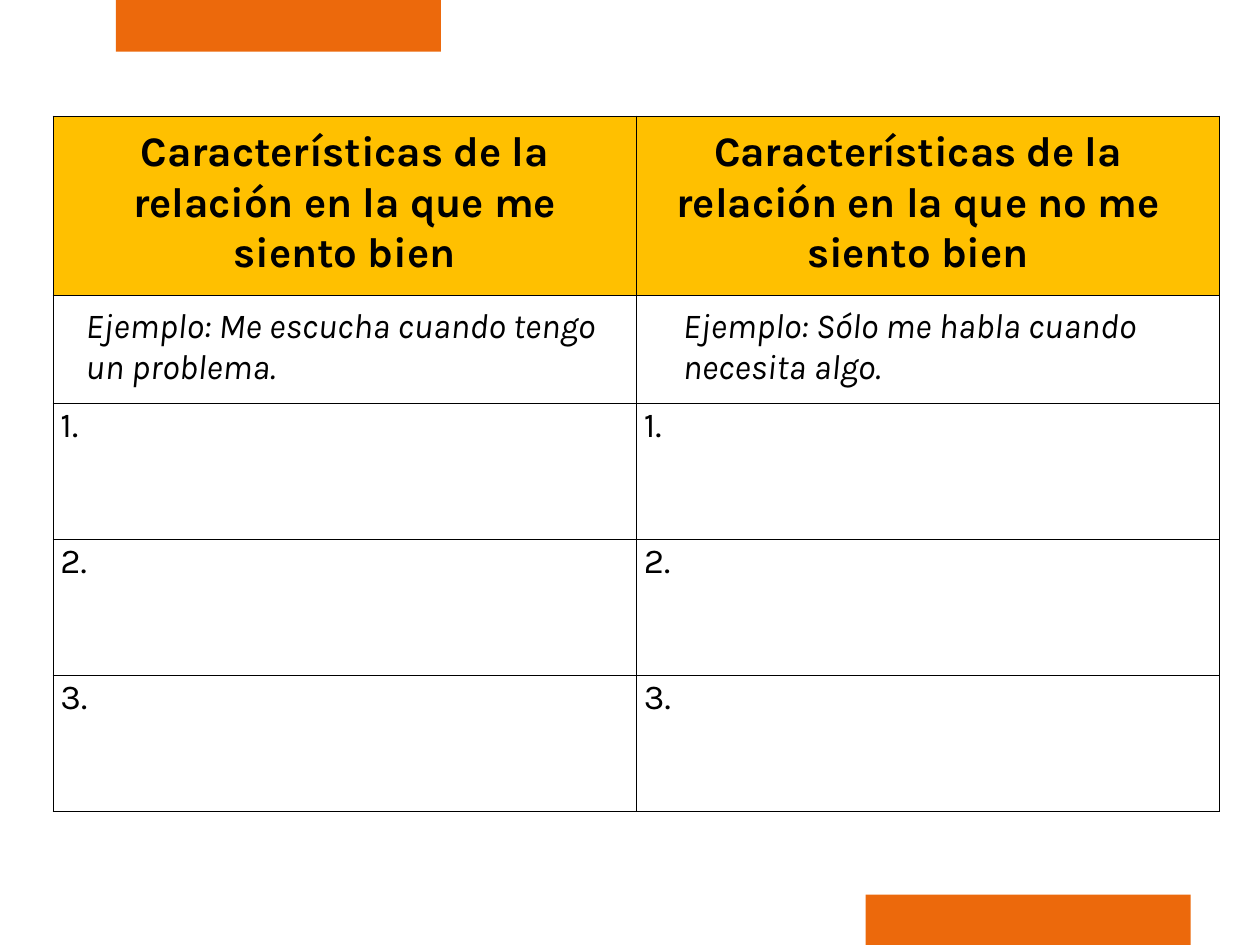
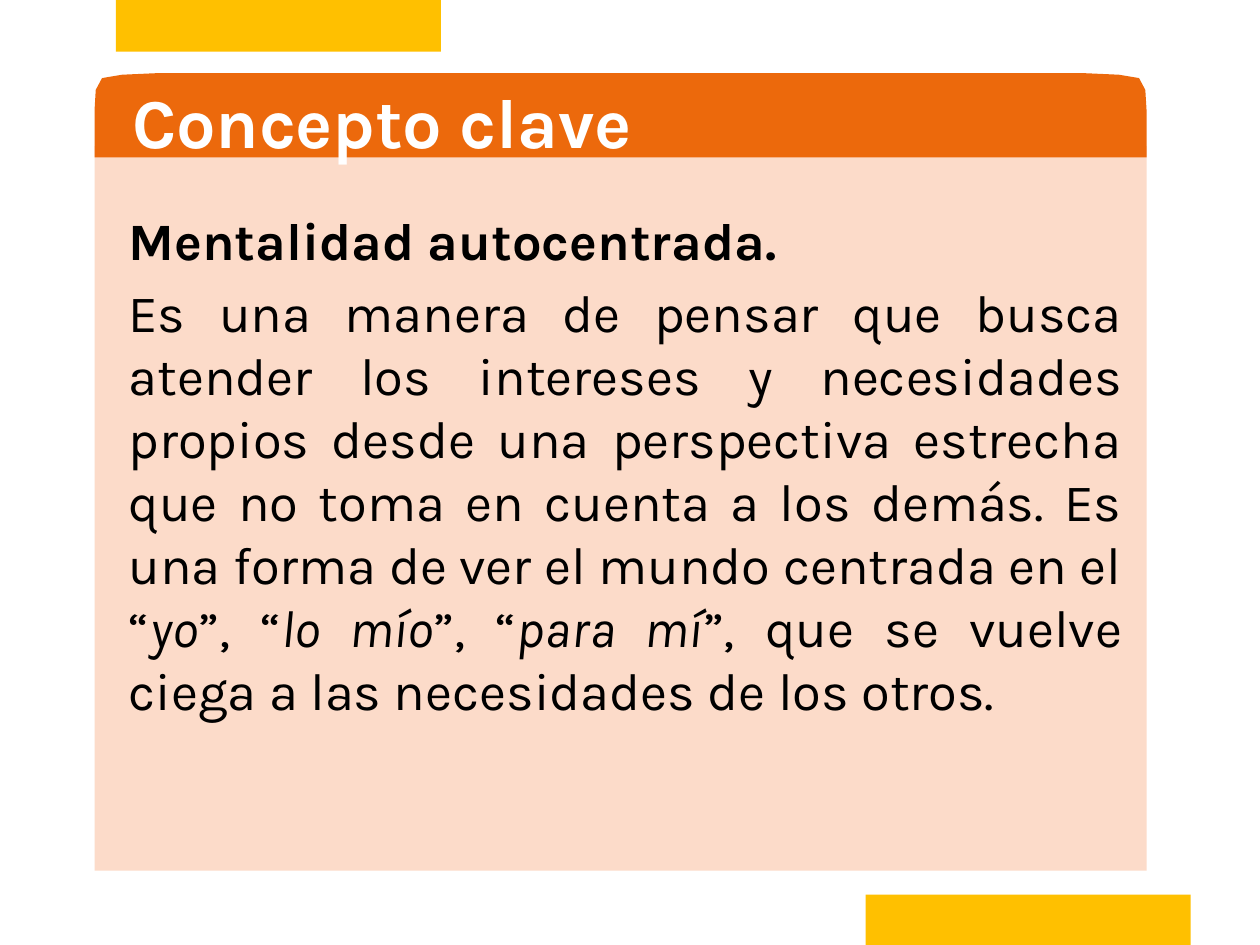
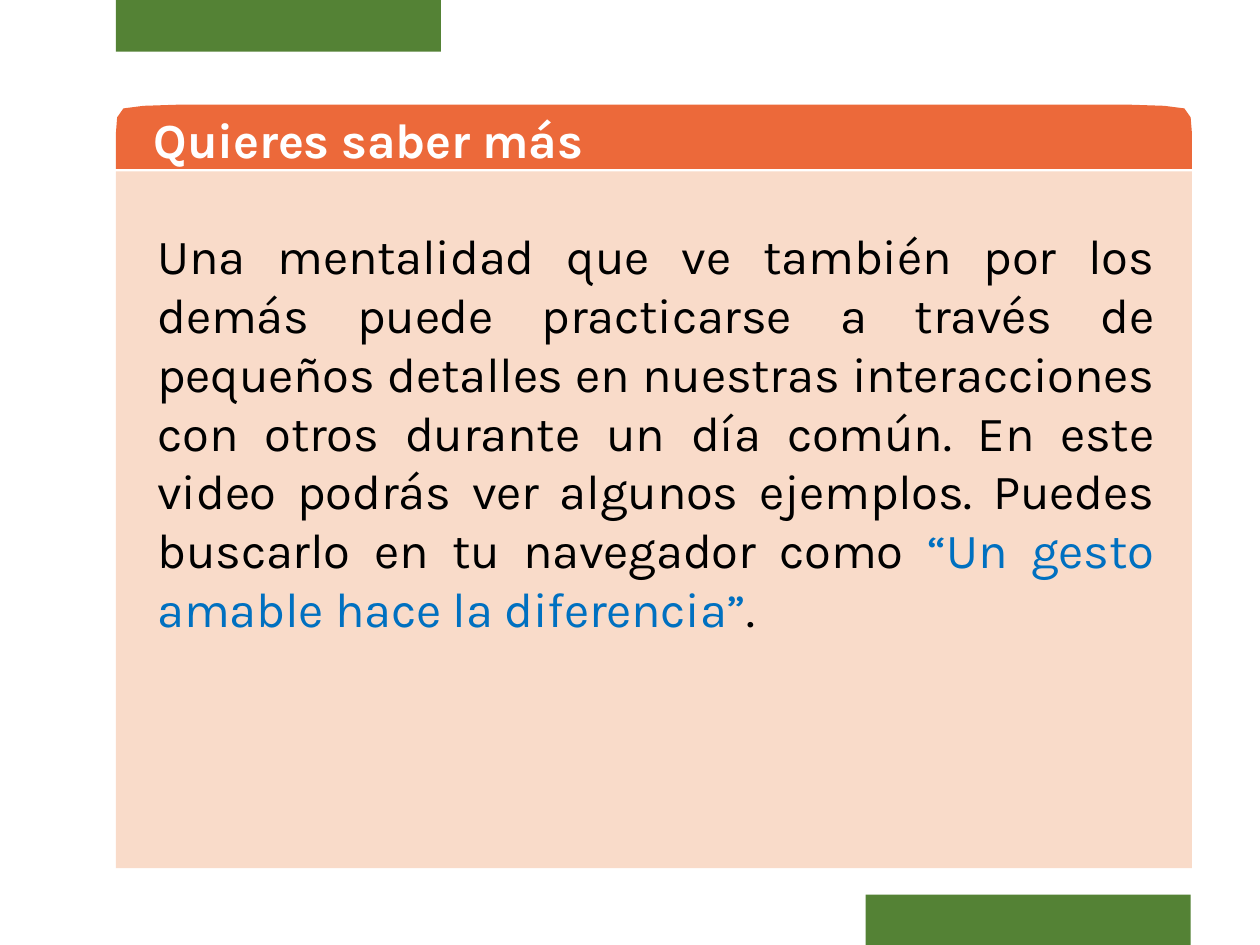
import lxml.etree
import pptx
import pptx.dml.color
import pptx.enum.shapes
import pptx.enum.text
import pptx.oxml.ns
import pptx.util

Inches = pptx.util.Inches
Pt = pptx.util.Pt
ALIGN = pptx.enum.text.PP_ALIGN
RECT = pptx.enum.shapes.MSO_SHAPE.RECTANGLE

FONT = "Karla"
HUES = {
    "orange": "EC690C",
    "coral": "EC693A",
    "gold": "FFC000",
    "green": "548235",
    "peach": "FCDBC9",
    "sand": "F9DBC9",
    "blue": "0070C0",
    "white": "FFFFFF",
    "black": "000000",
}


def paint(shape, hue):
    shape.shadow.inherit = False
    shape.fill.solid()
    shape.fill.fore_color.rgb = pptx.dml.color.RGBColor.from_string(HUES[hue])
    shape.line.fill.background()


def write(frame, paras, size, hue="black", top=0.05, side=0.0, indent=0.02,
          before=1.0, align=ALIGN.LEFT, space=0):
    """Fill a frame or cell; each paragraph is a list of (text, marks) runs,
    marks being b, i or a colour name."""
    for num, runs in enumerate(paras):
        par = frame.paragraphs[0] if num == 0 else frame.add_paragraph()
        # A heading above running text stays flush left
        par.alignment = ALIGN.LEFT if "b" in runs[0][1] and len(paras) > 1 else align
        par.space_before = Pt(before)
        par._p.get_or_add_pPr().set("marL", str(Inches(indent)))
        for text, marks in runs:
            run = par.add_run()
            run.text = text
            font = run.font
            font.name, font.size = FONT, Pt(size)
            font.bold, font.italic = "b" in marks, "i" in marks
            tint = next((m for m in marks if m in HUES), hue)
            font.color.rgb = pptx.dml.color.RGBColor.from_string(HUES[tint])
            run._r.get_or_add_rPr().set("spc", str(space))
    frame.margin_left = frame.margin_right = Inches(side)
    frame.margin_top = Inches(top)
    frame.margin_bottom = Inches(0.05 if side else 0)
    frame.word_wrap = True


deck = pptx.Presentation()
deck.slide_width, deck.slide_height = Inches(10), Inches(7.5)

# Shared bands at the top left and bottom right
slides = []
for hue in ("orange", "gold", "green"):
    slide = deck.slides.add_slide(deck.slide_layouts[6])
    for left, top in ((0.92, -0.01), (6.87, 7.1)):
        band = slide.shapes.add_shape(
            RECT, Inches(left), Inches(top), Inches(2.58), Inches(0.42))
        paint(band, hue)
    slides.append(slide)

# Slide 1: two-column worksheet
heads = [
    "Características de la relación en la que me siento bien",
    "Características de la relación en la que no me siento bien",
]
samples = [
    ("Ejemplo: Me escucha cuando tengo un problema.", 0.26),
    ("Ejemplo: Sólo me habla cuando necesita algo.", 0.37),
]
rows = [1.42, 0.86, 1.08, 1.08, 1.08]
wide = 4.63
grid = slides[0].shapes.add_table(
    len(rows), 2, Inches(0.42), Inches(0.92), Inches(2 * wide), Inches(sum(rows))).table
grid.first_row = grid.horz_banding = False
for col in grid.columns:
    col.width = Inches(wide)

for r, high in enumerate(rows):
    grid.rows[r].height = Inches(high)
    for c in range(2):
        cell = grid.cell(r, c)
        props = cell._tc.get_or_add_tcPr()
        for edge in ("a:lnL", "a:lnR", "a:lnT", "a:lnB"):
            line = lxml.etree.SubElement(
                props, pptx.oxml.ns.qn(edge), w=str(Pt(0.25)))
            fill = lxml.etree.SubElement(line, pptx.oxml.ns.qn("a:solidFill"))
            lxml.etree.SubElement(
                fill, pptx.oxml.ns.qn("a:srgbClr"), val=HUES["black"])
        if r == 0:
            cell.fill.solid()
            cell.fill.fore_color.rgb = pptx.dml.color.RGBColor.from_string(HUES["gold"])
            continue
        cell.fill.background()
        if r == 1:
            text, indent = samples[c]
            marks, top, before = ["i"], 0.09, 6.6
        else:
            text, indent = f"{r - 1}.", 0.06
            marks, top, before = [], 0.02, 1.7
        # Cells hold their own margins; the text goes in the frame
        write(cell.text_frame, [[(text, marks)]], 20, indent=indent, before=before)
        cell.margin_left = cell.margin_right = cell.margin_bottom = 0
        cell.margin_top = Inches(top)

for head, left in zip(heads, (0.7, 5.25)):
    box = slides[0].shapes.add_textbox(
        Inches(left), Inches(0.94), Inches(4.05), Inches(1.31))
    write(box.text_frame, [[(head, ["b"])]], 24, side=0.1, before=4.5,
          align=ALIGN.CENTER, space=-10)
    box.text_frame.auto_size = pptx.enum.text.MSO_AUTO_SIZE.SHAPE_TO_FIT_TEXT

# Slides 2 and 3: card with a rounded title tab
concept = [
    [("Mentalidad autocentrada.", ["b"])],
    [("Es una manera de pensar que busca atender los intereses y necesidades "
      "propios desde una perspectiva estrecha que no toma en cuenta a los demás. "
      "Es una forma de ver el mundo centrada en el “", []),
     ("yo", ["i"]), ("”, “", []), ("lo mío", ["i"]), ("”, “", []),
     ("para mí", ["i"]),
     ("”, que se vuelve ciega a las necesidades de los otros.", [])],
]
more = [
    [("Una mentalidad que ve también por los demás puede practicarse a través de "
      "pequeños detalles en nuestras interacciones con otros durante un día común. "
      "En este video podrás ver algunos ejemplos. Puedes buscarlo en tu navegador "
      "como ", []),
     ("“Un gesto amable hace la diferencia”", ["blue"]), (".", [])],
]
cards = [
    dict(left=0.75, wide=8.35, tab=(0.58, 0.67, "orange"), page=(1.16, 5.75, "peach"),
         title="Concepto clave", big=40, label=(0.6, 0.69),
         body=concept, size=30, text=(1.58, 4.18), inset=0.25, indent=0.02,
         before=5, space=0),
    dict(left=0.92, wide=8.54, tab=(0.83, 0.51, "coral"), page=(1.36, 5.53, "sand"),
         title="Quieres saber más", big=28, label=(0.85, 0.49),
         body=more, size=28, text=(1.72, 3.37), inset=0.33, indent=0,
         before=1, space=-10),
]
# Corner of the tab: inches from the side, share of the height
curve = [(0.52, 0), (0.22, 0.02), (0.06, 0.06), (0.01, 0.2), (0, 0.45), (0, 1)]

for slide, card in zip(slides[1:], cards):
    left, wide = card["left"], card["wide"]
    top, high, hue = card["page"]
    page = slide.shapes.add_shape(
        RECT, Inches(left), Inches(top), Inches(wide), Inches(high))
    paint(page, hue)

    top, high, hue = card["tab"]
    points = [(left + x, top + y * high) for x, y in curve]
    points += [(left + wide - x, top + y * high) for x, y in reversed(curve)]
    points = [(Inches(x), Inches(y)) for x, y in points]
    path = slide.shapes.build_freeform(*points[0])
    path.add_line_segments(points[1:], close=True)
    paint(path.convert_to_shape(), hue)

    top, high = card["label"]
    label = slide.shapes.add_textbox(
        Inches(left + 0.28), Inches(top), Inches(5.63), Inches(high))
    write(label.text_frame, [[(card["title"], ["b"])]], card["big"], "white",
          top=0.02, before=1.2, space=-10)

    top, high = card["text"]
    body = slide.shapes.add_textbox(
        Inches(left + card["inset"]), Inches(top), Inches(7.91), Inches(high))
    write(body.text_frame, card["body"], card["size"], top=0.07,
          indent=card["indent"], before=card["before"],
          align=ALIGN.JUSTIFY, space=card["space"])
    for box in (label, body):
        box.text_frame.auto_size = pptx.enum.text.MSO_AUTO_SIZE.SHAPE_TO_FIT_TEXT

deck.save("out.pptx")
